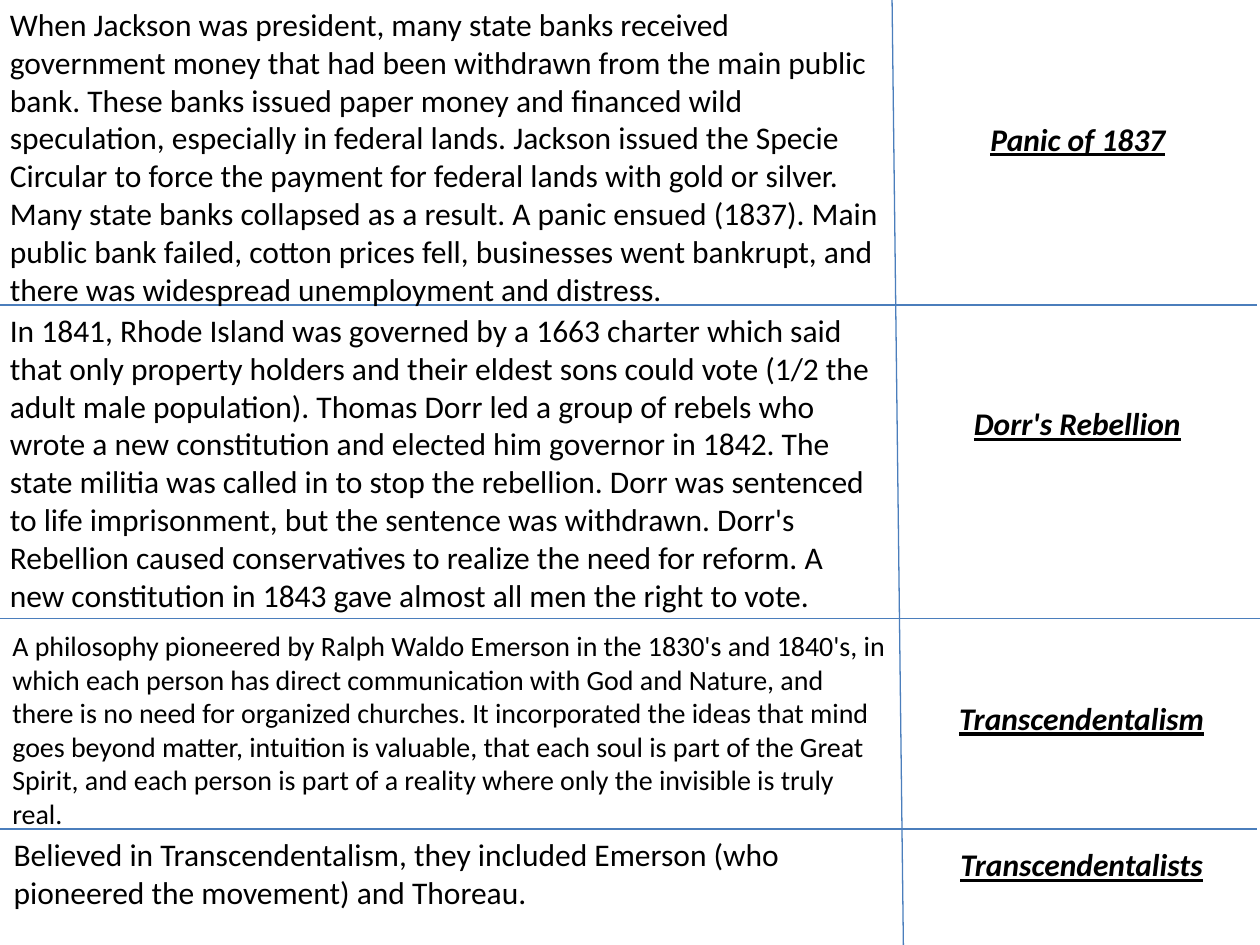
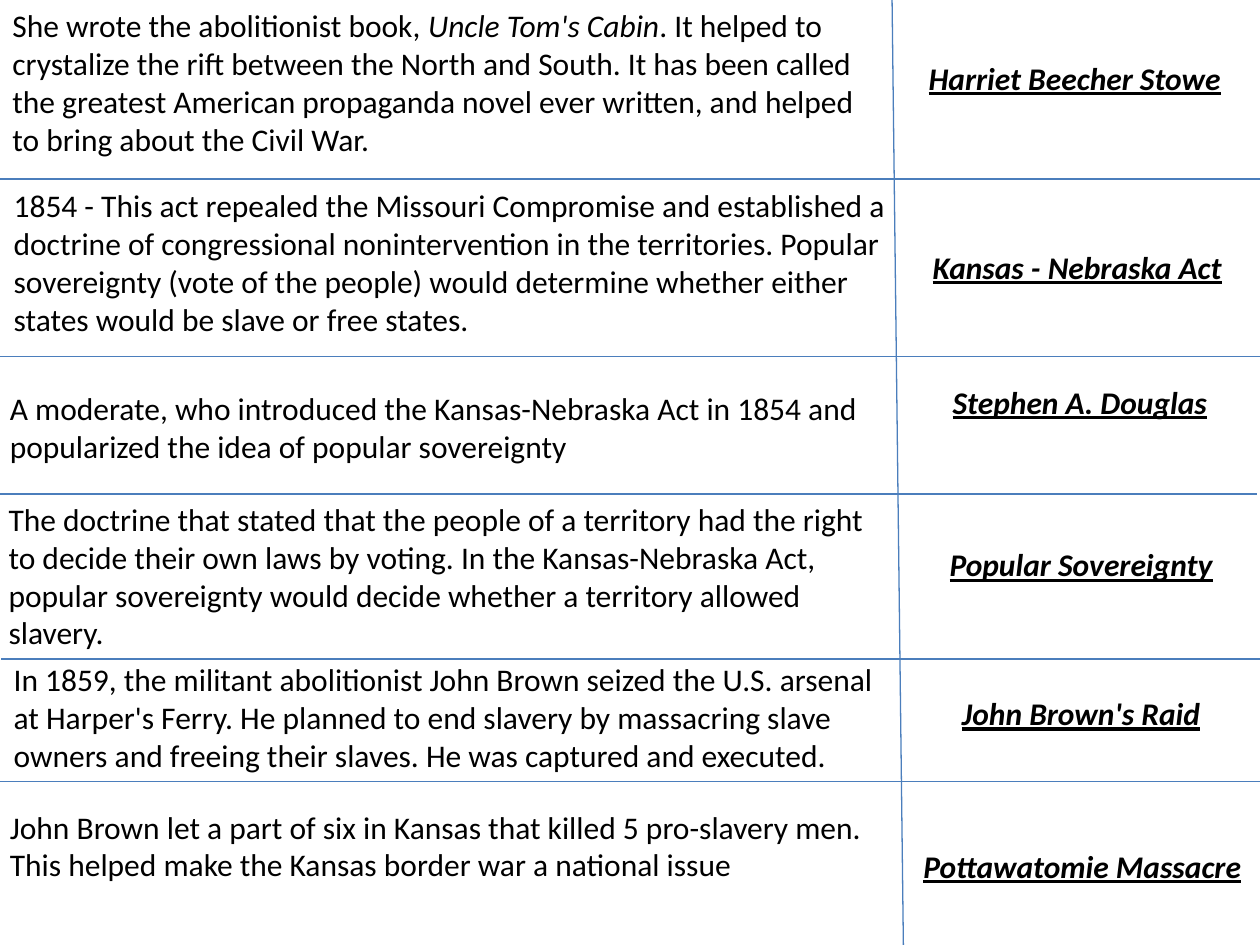
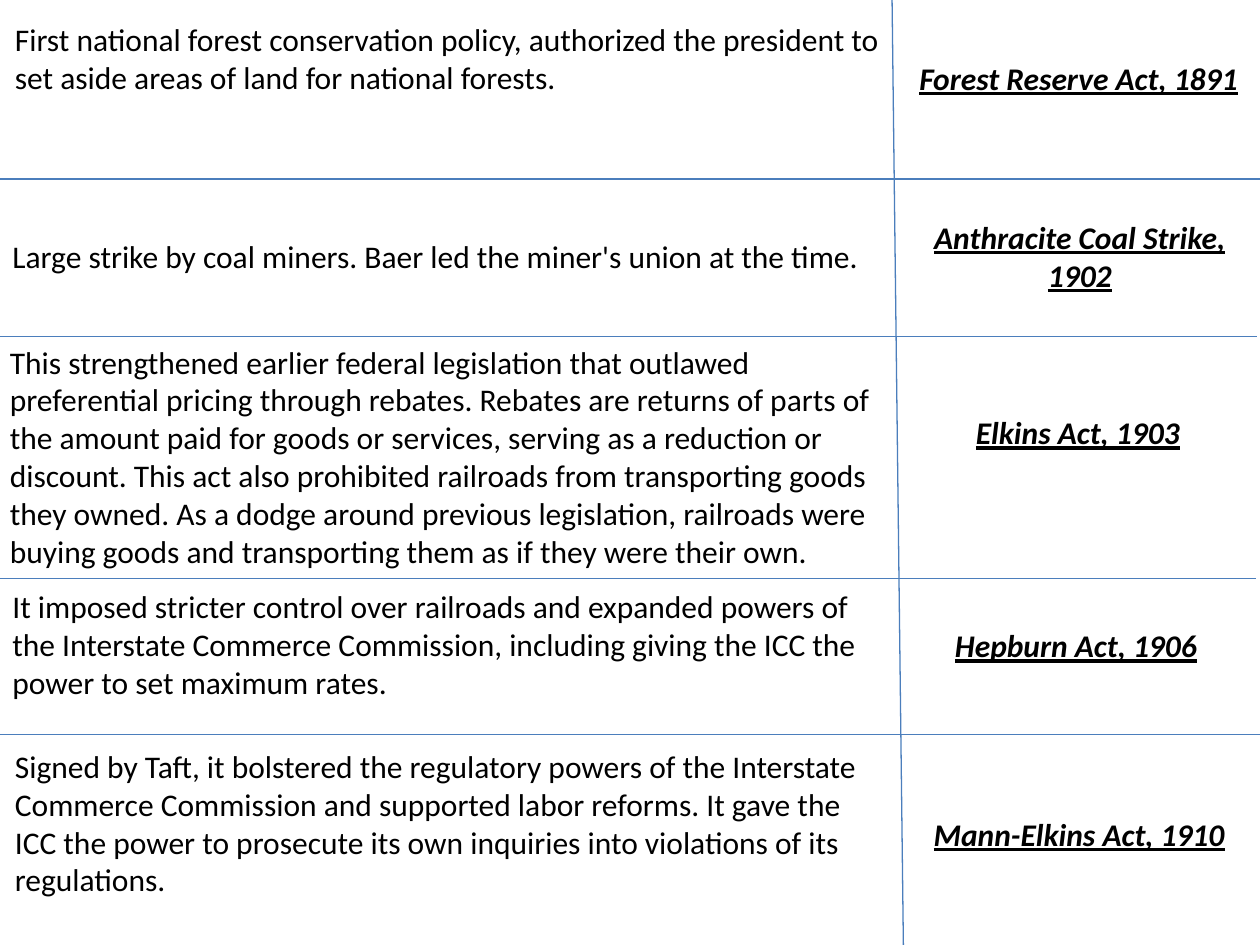
import lxml.etree
import pptx
import pptx.dml.color
import pptx.enum.shapes
import pptx.enum.text
import pptx.oxml.ns
import pptx.util

Inches = pptx.util.Inches
Pt = pptx.util.Pt
RGB = pptx.dml.color.RGBColor.from_string
ALIGN = pptx.enum.text.PP_ALIGN

THEME = {
    "font": "Calibri",
    "text": "000000",
    "rule": "4B7EBC",
    "rule_width": 0.75,
    "size": 18,
    "small": 16,
}
SLIDE_W, SLIDE_H = 10, 7.5
DIVIDER = (7.08, 0, 7.17, SLIDE_H)
LINE_SPACING = 1.215
BOX_PADDING = 0.1

# Rules are (left, top). Each card holds a term and a definition, both as
# (left, top, width, lines, text); asterisks enclose italics.
SLIDES = [
    {
        "rules": [(-0.02, 2.42), (0, 4.91), (-0.02, 6.58)],
        "cards": [
            {"term": (7.11, 0.9, 2.89, 2, "Panic of 1837"),
             "definition": (
                 -0.02, -0.01, 7.12, 8,
                 "When Jackson was president, many state banks received government "
                 "money that had been withdrawn from the main public bank. These banks "
                 "issued paper money and financed wild speculation, especially in "
                 "federal lands. Jackson issued the Specie Circular to force the "
                 "payment for federal lands with gold or silver. Many state banks "
                 "collapsed as a result. A panic ensued (1837). Main public bank "
                 "failed, cotton prices fell, businesses went bankrupt, and there was "
                 "widespread unemployment and distress.")},
            {"term": (7.12, 3.16, 2.86, 1, "Dorr's Rebellion"),
             "definition": (
                 -0.02, 2.42, 7.12, 8,
                 "In 1841, Rhode Island was governed by a 1663 charter which said that "
                 "only property holders and their eldest sons could vote (1/2 the adult "
                 "male population). Thomas Dorr led a group of rebels who wrote a new "
                 "constitution and elected him governor in 1842. The state militia was "
                 "called in to stop the rebellion. Dorr was sentenced to life "
                 "imprisonment, but the sentence was withdrawn. Dorr's Rebellion caused "
                 "conservatives to realize the need for reform. A new constitution in "
                 "1843 gave almost all men the right to vote.")},
            {"term": (7.17, 5.5, 2.83, 1, "Transcendentalism"),
             "size": THEME["small"],
             "definition": (
                 0, 4.94, 7.17, 6,
                 "A philosophy pioneered by Ralph Waldo Emerson in the 1830's and "
                 "1840's, in which each person has direct communication with God and "
                 "Nature, and there is no need for organized churches. It incorporated "
                 "the ideas that mind goes beyond matter, intuition is valuable, that "
                 "each soul is part of the Great Spirit, and each person is part of a "
                 "reality where only the invisible is truly real.")},
            {"term": (7.17, 6.66, 2.83, 2, "Transcendentalists"),
             "definition": (
                 0.01, 6.58, 7.16, 2,
                 "Believed in Transcendentalism, they included Emerson (who pioneered "
                 "the movement) and Thoreau.")},
        ],
    },
    {
        "rules": [(0, 1.42), (0, 2.83), (-0.02, 3.92), (0.01, 5.23), (0, 6.2)],
        "cards": [
            {"term": (7.08, 0.42, 2.9, 1, "Harriet Beecher Stowe"),
             "definition": (
                 0, 0, 7.08, 4,
                 "She wrote the abolitionist book, *Uncle Tom's Cabin*. It helped to "
                 "crystalize the rift between the North and South. It has been called "
                 "the greatest American propaganda novel ever written, and helped to "
                 "bring about the Civil War.")},
            {"term": (7.12, 1.92, 2.86, 1, "Kansas - Nebraska Act"),
             "definition": (
                 0.01, 1.43, 7.12, 4,
                 "1854 - This act repealed the Missouri Compromise and established a "
                 "doctrine of congressional nonintervention in the territories. Popular "
                 "sovereignty (vote of the people) would determine whether either "
                 "states would be slave or free states.")},
            {"term": (7.15, 2.99, 2.84, 1, "Stephen A. Douglas"),
             "definition": (
                 -0.02, 3.04, 7.14, 2,
                 "A moderate, who introduced the Kansas-Nebraska Act in 1854 and "
                 "popularized the idea of popular sovereignty")},
            {"term": (7.17, 4.28, 2.82, 1, "Popular Sovereignty"),
             "definition": (
                 -0.03, 3.92, 7.2, 4,
                 "The doctrine that stated that the people of a territory had the right "
                 "to decide their own laws by voting. In the Kansas-Nebraska Act, "
                 "popular sovereignty would decide whether a territory allowed "
                 "slavery.")},
            {"term": (7.17, 5.46, 2.82, 1, "John Brown's Raid"),
             "definition": (
                 0.01, 5.19, 7.12, 3,
                 "In 1859, the militant abolitionist John Brown seized the U.S. arsenal "
                 "at Harper's Ferry. He planned to end slavery by massacring slave "
                 "owners and freeing their slaves. He was captured and executed.")},
            {"term": (7.17, 6.67, 2.84, 1, "Pottawatomie Massacre"),
             "definition": (
                 -0.02, 6.36, 7.18, 2,
                 "John Brown let a part of six in Kansas that killed 5 pro-slavery men. "
                 "This helped make the Kansas border war a national issue")},
        ],
    },
    {
        "rules": [(0, 1.42), (-0.02, 2.67), (-0.03, 4.59), (0, 5.83)],
        "cards": [
            {"term": (7.12, 0.42, 2.88, 1, "Forest Reserve Act, 1891"),
             "definition": (
                 0.02, 0.11, 7.06, 2,
                 "First national forest conservation policy, authorized the president "
                 "to set aside areas of land for national forests.")},
            {"term": (7.13, 1.68, 2.88, 2, "Anthracite Coal Strike, 1902"),
             "definition": (
                 0, 1.83, 7.08, 1,
                 "Large strike by coal miners. Baer led the miner's union at the "
                 "time.")},
            {"term": (7.14, 3.23, 2.83, 1, "Elkins Act, 1903"),
             "definition": (
                 -0.02, 2.67, 7.14, 6,
                 "This strengthened earlier federal legislation that outlawed "
                 "preferential pricing through rebates. Rebates are returns of parts of "
                 "the amount paid for goods or services, serving as a reduction or "
                 "discount. This act also prohibited railroads from transporting goods "
                 "they owned. As a dodge around previous legislation, railroads were "
                 "buying goods and transporting them as if they were their own.")},
            {"term": (7.12, 4.92, 2.84, 2, "Hepburn Act, 1906"),
             "definition": (
                 0, 4.61, 7.08, 3,
                 "It imposed stricter control over railroads and expanded powers of the "
                 "Interstate Commerce Commission, including giving the ICC the power to "
                 "set maximum rates.")},
            {"term": (7.16, 6.42, 2.81, 1, "Mann-Elkins Act, 1910"),
             "definition": (
                 0.02, 5.88, 7.12, 4,
                 "Signed by Taft, it bolstered the regulatory powers of the Interstate "
                 "Commerce Commission and supported labor reforms. It gave the ICC the "
                 "power to prosecute its own inquiries into violations of its "
                 "regulations.")},
        ],
    },
]


def add_rule(s, x1, y1, x2, y2):
    sp = s.shapes.add_connector(
        pptx.enum.shapes.MSO_CONNECTOR.STRAIGHT,
        Inches(x1), Inches(y1), Inches(x2), Inches(y2))
    sp.line.color.rgb = RGB(THEME["rule"])
    sp.line.width = Pt(THEME["rule_width"])
    lxml.etree.SubElement(sp._element.spPr, pptx.oxml.ns.qn("a:effectLst"))


def add_text(s, left, top, width, lines, text, size=THEME["size"],
             align=ALIGN.LEFT, bold=False, italic=False, underline=False):
    height = BOX_PADDING + lines * size * LINE_SPACING / 72
    sp = s.shapes.add_textbox(
        Inches(left), Inches(top), Inches(width), Inches(height))
    tf = sp.text_frame
    tf.word_wrap = True
    p = tf.paragraphs[0]
    p.alignment = align
    for i, part in enumerate(text.split("*")):
        r = p.add_run()
        r.text = part
        r.font.name = THEME["font"]
        r.font.size = Pt(size)
        r.font.color.rgb = RGB(THEME["text"])
        r.font.bold = bold
        r.font.italic = italic or i % 2 == 1
        r.font.underline = underline


def add_card_slide(prs, rules, cards):
    s = prs.slides.add_slide(prs.slide_layouts[6])
    add_rule(s, *DIVIDER)
    for left, top in rules:
        add_rule(s, left, top, left + SLIDE_W, top)
    for card in cards:
        add_text(s, *card["term"], align=ALIGN.CENTER,
                 bold=True, italic=True, underline=True)
        add_text(s, *card["definition"], size=card.get("size", THEME["size"]))


def main():
    prs = pptx.Presentation()
    prs.slide_width = Inches(SLIDE_W)
    prs.slide_height = Inches(SLIDE_H)
    for slide in SLIDES:
        add_card_slide(prs, **slide)
    prs.save("out.pptx")


if __name__ == "__main__":
    main()
